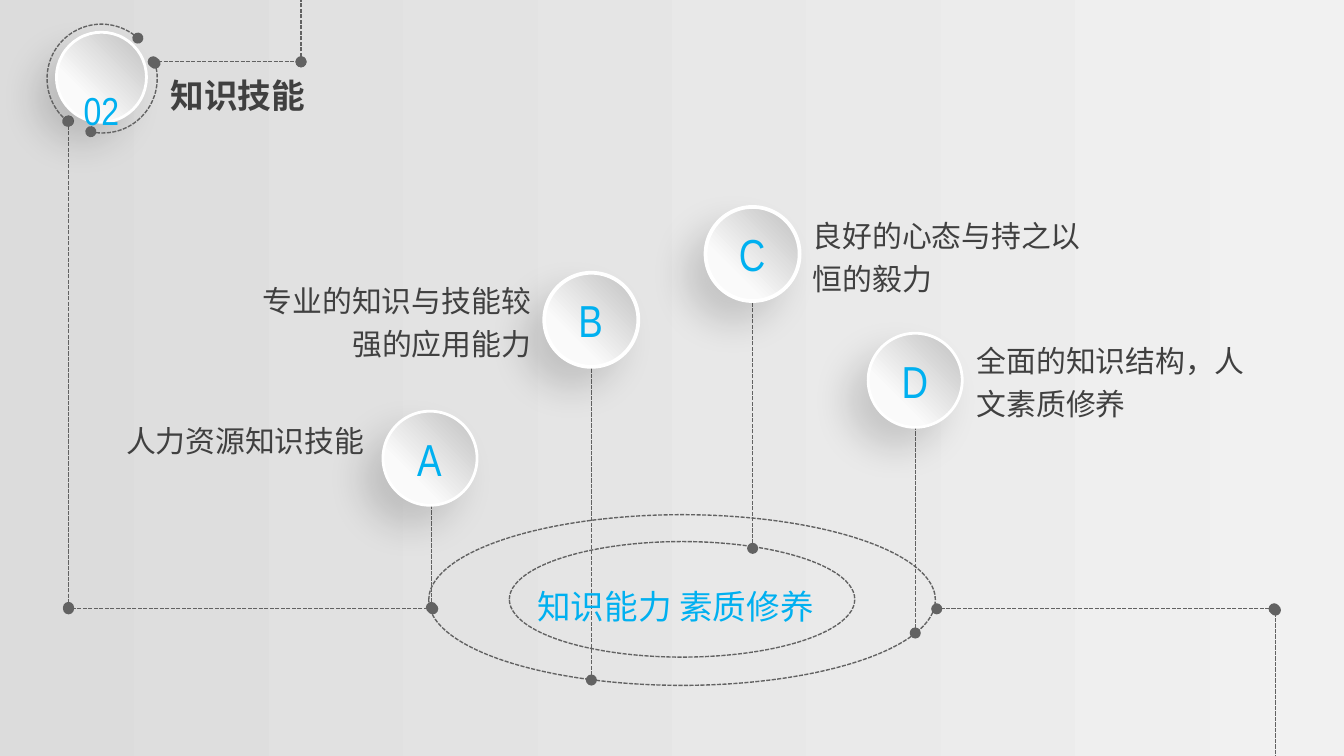
import dataclasses
import pptx
import pptx.dml.color
import pptx.enum.dml
import pptx.enum.shapes
import pptx.enum.text
import pptx.oxml
import pptx.oxml.ns
import pptx.util

Inches = pptx.util.Inches
Pt = pptx.util.Pt
RGB = pptx.dml.color.RGBColor.from_string
qn = pptx.oxml.ns.qn
SHAPE = pptx.enum.shapes.MSO_SHAPE
STRAIGHT = pptx.enum.shapes.MSO_CONNECTOR.STRAIGHT
ALIGN = pptx.enum.text.PP_ALIGN
ANCHOR = pptx.enum.text.MSO_ANCHOR


@dataclasses.dataclass(frozen=True)
class Theme:
    accent: str = "00B0F0"
    ink: str = "404040"
    dash: str = "626262"
    rim: str = "FFFFFF"
    disc: tuple = (("BFBFBF", 0), ("FAFAFA", 0.7))
    backdrop: tuple = (("DCDCDC", 0), ("F1F1F1", 1))
    chinese: str = "Noto Sans CJK SC"
    latin: str = "Arial Narrow"
    number: int = 36
    letter: int = 24
    heading: int = 18
    body: int = 16


theme = Theme()
SHADOW = (
    '<a:effectLst xmlns:a="http://schemas.openxmlformats.org/drawingml/2006/main">'
    '<a:outerShdw blurRad="254000" dist="190500" dir="8100000" algn="tr" rotWithShape="0">'
    '<a:srgbClr val="000000"><a:alpha val="15000"/></a:srgbClr>'
    '</a:outerShdw></a:effectLst>'
)


def style_dashed(item):
    item.line.color.rgb = RGB(theme.dash)
    item.line.width = Pt(0.75)
    item.line.dash_style = pptx.enum.dml.MSO_LINE.SQUARE_DOT
    properties = item.element.spPr
    outline = properties.find(qn("a:ln"))
    for end in ("a:headEnd", "a:tailEnd"):
        outline.append(pptx.oxml.parse_xml(
            f'<{end} xmlns:a="http://schemas.openxmlformats.org/drawingml/2006/main" type="oval"/>'))
    properties.append(properties.makeelement(qn("a:effectLst"), {}))


def add_text(place, text, font, size, color, align, spacing=1.0, wrap=False, anchor=ANCHOR.MIDDLE):
    box = page.shapes.add_textbox(*map(Inches, place))
    frame = box.text_frame
    frame.text = text
    frame.word_wrap = wrap
    frame.auto_size = pptx.enum.text.MSO_AUTO_SIZE.SHAPE_TO_FIT_TEXT
    frame.vertical_anchor = anchor
    para = frame.paragraphs[0]
    para.alignment = align
    para.line_spacing = spacing
    span = para.runs[0]
    span.font.size = Pt(size)
    span.font.color.rgb = RGB(color)
    span.font.name = font
    properties = span.font._element
    properties.append(properties.makeelement(qn("a:ea"), {"typeface": font}))
    return span


deck = pptx.Presentation()
deck.slide_width = Inches(10)
deck.slide_height = Inches(10 * 9 / 16)
page = deck.slides.add_slide(deck.slide_layouts[6])

backdrop = page.background.fill
backdrop.gradient()
backdrop.gradient_angle = 0
for stop, (color, position) in zip(backdrop.gradient_stops, theme.backdrop):
    stop.color.rgb = RGB(color)
    stop.position = position

skills = [
    ("A", 2.85, 3.06, 3.21, 4.52, 1.5),
    ("B", 4.05, 2.03, 4.4, 5.06, 2),
    ("D", 6.46, 2.48, 6.81, 4.71, 1.5),
    ("C", 5.25, 1.54, 5.6, 4.08, 2),
]
stems = [(stem, foot, stem, top + 0.45) for _, _, top, stem, foot, _ in skills]
routes = [
    (0.51, 0.9, 0.51, 4.52),
    (3.22, 4.53, 0.51, 4.53),
    (9.48, 4.53, 6.97, 4.53),
    (9.49, 5.77, 9.49, 4.54),
    (1.14, 0.46, 2.24, 0.46),
    (2.24, 0.46, 2.24, -0.24),
]
for ends in stems + routes:
    style_dashed(page.shapes.add_connector(STRAIGHT, *map(Inches, ends)))

discs = [(left, top, 0.7, rim) for _, left, top, _, _, rim in skills]
for left, top, size, rim in discs + [(0.42, 0.24, 0.67, 1.5)]:
    disc = page.shapes.add_shape(SHAPE.OVAL, *map(Inches, (left, top, size, size)))
    disc.fill.gradient()
    disc.fill.gradient_angle = 225
    for stop, (color, position) in zip(disc.fill.gradient_stops, theme.disc):
        stop.color.rgb = RGB(color)
        stop.position = position
    disc.line.color.rgb = RGB(theme.rim)
    disc.line.width = Pt(rim)
    disc.element.spPr.append(pptx.oxml.parse_xml(SHADOW))

for place in ((3.19, 3.83, 3.77, 1.27), (3.79, 4.03, 2.57, 0.86)):
    ring = page.shapes.add_shape(SHAPE.OVAL, *map(Inches, place))
    ring.fill.background()
    style_dashed(ring)

for left, start, finish, flipped in ((0.35, 136.81, 31.02, "1"), (0.36, 206.18, 61.6, "0")):
    arc = page.shapes.add_shape(SHAPE.ARC, *map(Inches, (left, 0.18, 0.81, 0.81)))
    arc.adjustments[0] = start
    arc.adjustments[1] = finish
    arc.element.spPr.find(qn("a:xfrm")).set("flipH", flipped)
    arc.fill.background()
    style_dashed(arc)

number = add_text((0.48, 0.29, 0.55, 0.71), "02", theme.latin, theme.number, theme.accent,
                  ALIGN.CENTER, 1.5)
number.font._element.set("baseline", "12000")
title = add_text((1.17, 0.51, 1.21, 0.4), "知识技能", theme.chinese, theme.heading, theme.ink,
                 ALIGN.LEFT, anchor=ANCHOR.TOP)
title.font.bold = True
add_text((3.9, 4.25, 2.35, 0.46), "知识能力 素质修养", theme.chinese, theme.heading, theme.accent,
         ALIGN.JUSTIFY, 1.2)

descriptions = [
    (0.54, 3.04, 0.42, "人力资源知识技能", ALIGN.RIGHT),
    (1.78, 2, 0.75, "专业的知识与技能较强的应用能力", ALIGN.RIGHT),
    (7.17, 2.45, 0.75, "全面的知识结构，人文素质修养", ALIGN.LEFT),
    (5.95, 1.52, 0.75, "良好的心态与持之以恒的毅力", ALIGN.LEFT),
]
for left, top, height, text, align in descriptions:
    add_text((left, top, 2.27, height), text, theme.chinese, theme.body, theme.ink, align, 1.2,
             wrap=True, anchor=ANCHOR.TOP)

for letter, left, top, _, _, _ in skills:
    add_text((left + 0.15, top + 0.1, 0.39, 0.5), letter, theme.latin, theme.letter, theme.accent,
             ALIGN.CENTER)

deck.save("out.pptx")
